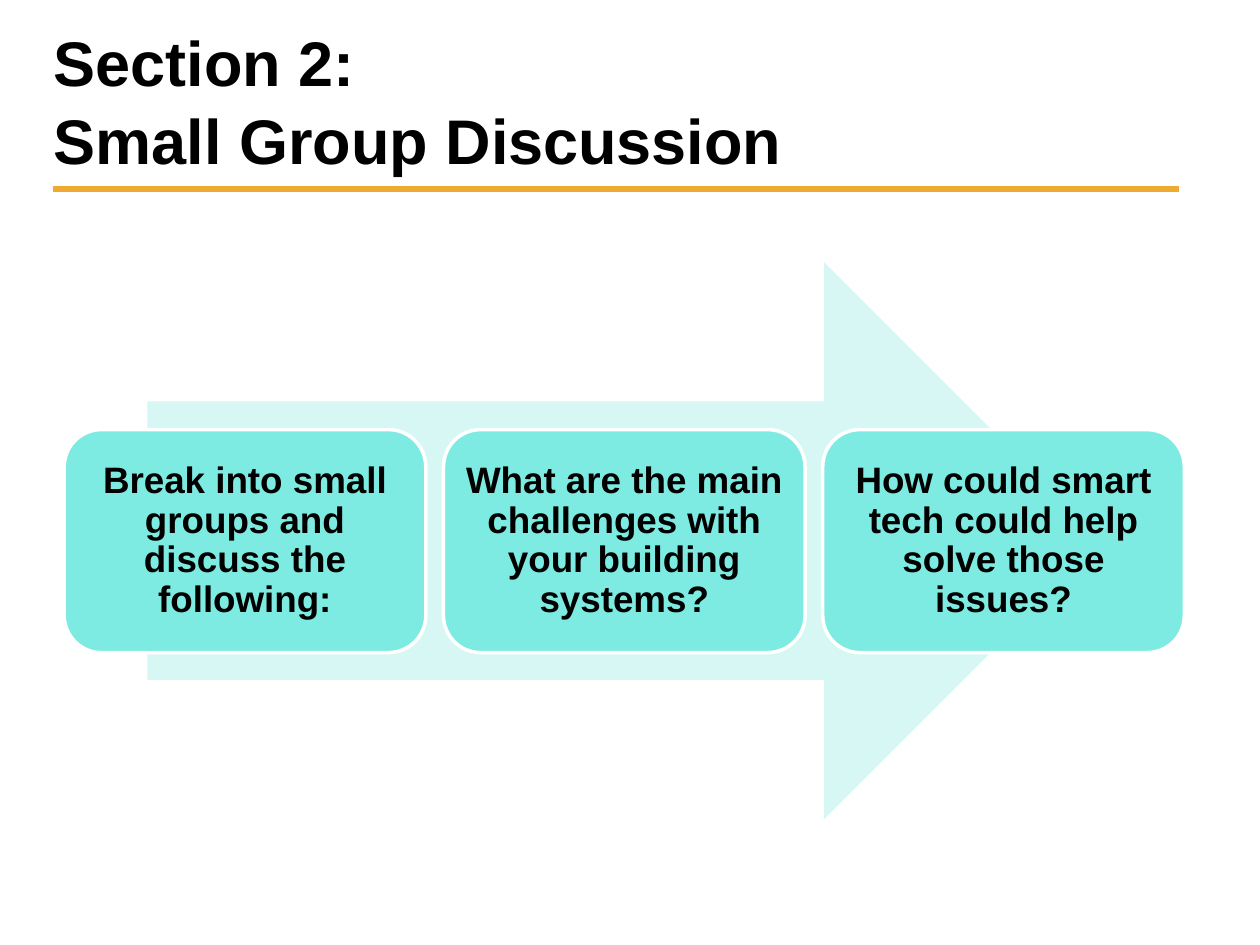
"""Build the small group discussion slide."""
from dataclasses import dataclass

from lxml.etree import SubElement
from pptx import Presentation
from pptx.dml.color import RGBColor as Color
from pptx.enum.shapes import MSO_CONNECTOR as Connector, MSO_SHAPE as Shape
from pptx.enum.text import MSO_ANCHOR as Anchor, PP_ALIGN as Align
from pptx.oxml.ns import qn
from pptx.util import Inches, Pt


@dataclass(frozen=True)
class Theme:
    font: str = "Arial"
    ink: str = "000000"
    rule: str = "EFAB31"
    arrow: str = "D7F7F4"
    card: str = "7DEBE1"
    outline: str = "FFFFFF"
    title_size: int = 36
    card_size: int = 21


class SlideBuilder:
    def __init__(self, slide, theme):
        self.slide = slide
        self.theme = theme

    def set_text(self, shape, text, size, align, spacing, margins):
        frame = shape.text_frame
        frame.text = text
        frame.word_wrap = True
        frame.vertical_anchor = Anchor.MIDDLE
        frame.margin_left = frame.margin_right = Inches(margins[0])
        frame.margin_top = frame.margin_bottom = Inches(margins[1])
        for paragraph in frame.paragraphs:
            paragraph.alignment = align
            paragraph.line_spacing = spacing
            for run in paragraph.runs:
                run.font.name = self.theme.font
                run.font.size = Pt(size)
                run.font.bold = True
                run.font.color.rgb = Color.from_string(self.theme.ink)

    def title(self, text, left, top, width, height):
        box = self.slide.shapes.add_textbox(
            Inches(left), Inches(top), Inches(width), Inches(height))
        self.set_text(box, text, self.theme.title_size, Align.LEFT, 1.03, (0.1, 0.05))

    def rule(self, left, right, y):
        line = self.slide.shapes.add_connector(
            Connector.STRAIGHT, Inches(left), Inches(y), Inches(right), Inches(y))
        line.line.color.rgb = Color.from_string(self.theme.rule)
        line.line.width = Pt(4)
        SubElement(line._element.spPr, qn("a:effectLst"))

    def block(self, kind, fill, left, top, width, height):
        shape = self.slide.shapes.add_shape(
            kind, Inches(left), Inches(top), Inches(width), Inches(height))
        shape.shadow.inherit = False
        shape.fill.solid()
        shape.fill.fore_color.rgb = Color.from_string(fill)
        shape.line.fill.background()
        return shape

    def arrow(self, left, top, width, height):
        self.block(Shape.RIGHT_ARROW, self.theme.arrow, left, top, width, height)

    def card(self, text, left, top, width, height):
        card = self.block(
            Shape.ROUNDED_RECTANGLE, self.theme.card, left, top, width, height)
        card.line.color.rgb = Color.from_string(self.theme.outline)
        card.line.width = Pt(2)
        self.set_text(card, text, self.theme.card_size, Align.CENTER, 0.9, (0.08, 0.08))


def main():
    presentation = Presentation()
    presentation.slide_width = Inches(10)
    presentation.slide_height = Inches(7.5)
    slide = presentation.slides.add_slide(presentation.slide_layouts[6])
    builder = SlideBuilder(slide, Theme())

    builder.rule(0.42, 9.36, 1.5)
    builder.title("Section 2:\vSmall Group Discussion", 0.33, 0.25, 8.92, 1.08)
    builder.arrow(1.17, 2.08, 7.58, 4.42)

    steps = (
        "Break into small groups and discuss the following:",
        "What are the main challenges with your building systems?",
        "How could smart tech could help solve those issues?",
    )
    card_width, gap = 2.87, 0.14
    for index, step in enumerate(steps):
        left = 0.51 + index * (card_width + gap)
        builder.card(step, left, 3.41, card_width, 1.77)

    presentation.save("out.pptx")


if __name__ == "__main__":
    main()
